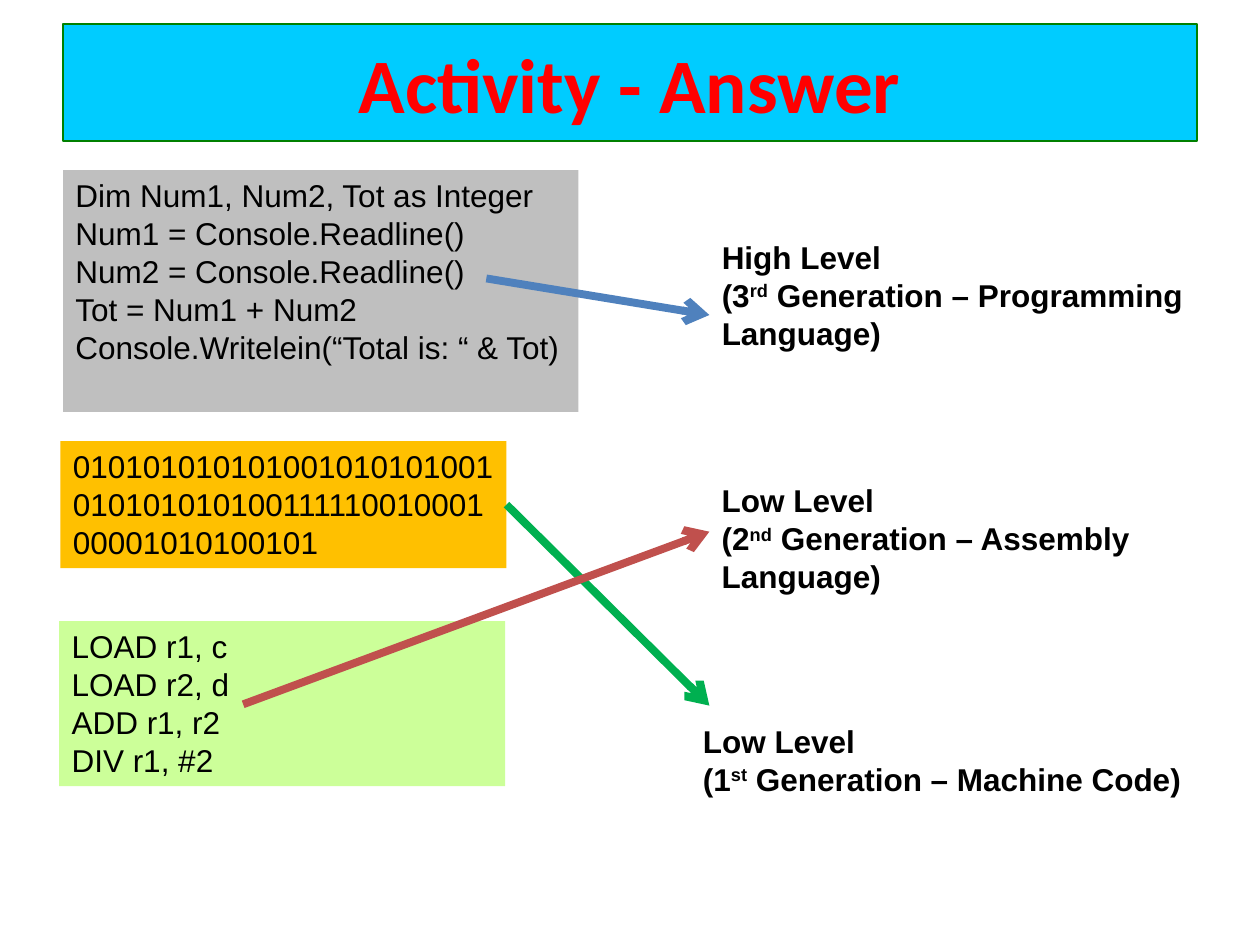
from lxml import etree
from pptx import Presentation
from pptx import util as u
from pptx.dml.color import RGBColor
from pptx.enum import shapes, text
from pptx.oxml.ns import qn

COLORS = {
    "title_fill": "00CCFF", "title_line": "008000", "title_text": "FF0000",
    "text": "000000", "basic": "BFBFBF", "binary": "FFC000",
    "assembly": "CCFF99", "to_machine": "00B050", "to_assembly": "C0504D",
    "to_high": "4F81BD",
}
COLORS = {part: RGBColor.from_string(value) for part, value in COLORS.items()}

prs = Presentation()
prs.slide_width, prs.slide_height = u.Inches(10), u.Inches(7.5)
COLUMN = prs.slide_width / 100   # the grid has 100 columns and 75 rows
ROW = prs.slide_height / 75
slide = prs.slides.add_slide(prs.slide_layouts[5])


def grid(*lengths):
    """Turn alternating columns and rows into slide lengths."""
    return [int(n * (ROW if i % 2 else COLUMN)) for i, n in enumerate(lengths)]


def add_text(place, lines, bold=False):
    """Add a wrapped text box; each line is a list of (text, is_superscript)."""
    box = slide.shapes.add_textbox(*grid(*place))
    frame = box.text_frame
    frame.word_wrap = True
    for i, line in enumerate(lines):
        paragraph = frame.paragraphs[0] if i == 0 else frame.add_paragraph()
        for words, superscript in line:
            run = paragraph.add_run()
            run.text = words
            if superscript:
                run._r.get_or_add_rPr().set("baseline", "30000")
        font = paragraph.font
        font.name, font.size, font.bold = "Arial", u.Pt(18), bold
        font.color.rgb = COLORS["text"]
    return box


# Title
title = slide.shapes.title
title.left, title.top, title.width, title.height = grid(5, 1.9, 90, 9.3)
title.fill.solid()
title.fill.fore_color.rgb = COLORS["title_fill"]
title.line.color.rgb = COLORS["title_line"]
title.line.width = u.Pt(0.75)
title.text_frame.text = "Activity - Answer"
title.text_frame.vertical_anchor = text.MSO_ANCHOR.MIDDLE
heading = title.text_frame.paragraphs[0]
heading.alignment = text.PP_ALIGN.CENTER
heading.font.name, heading.font.size, heading.font.bold = "Calibri", u.Pt(44), True
heading.font.color.rgb = COLORS["title_text"]

# Code samples
samples = {
    "basic": ((5, 13.5, 40.9, 19.2), [
        "Dim Num1, Num2, Tot as Integer",
        "Num1 = Console.Readline()",
        "Num2 = Console.Readline()",
        "Tot = Num1 + Num2",
        "Console.Writelein(“Total is: “ & Tot)",
    ]),
    "binary": ((4.8, 35, 35.4, 10.1), [
        "01010101010100101010100101010101010011111001000100001010100101",
    ]),
    "assembly": ((4.7, 49.3, 35.4, 13.1), [
        "LOAD r1, c", "LOAD r2, d", "ADD r1, r2", "DIV r1, #2",
    ]),
}
code_boxes = {}
for language, (place, code) in samples.items():
    box = add_text(place, [[(line, False)] for line in code])
    box.fill.solid()
    box.fill.fore_color.rgb = COLORS[language]
    code_boxes[language] = box

# Arrows from each sample to its answer
arrows = [
    ("to_machine", (40.2, 40, 56.3, 56)),
    ("to_assembly", (19.3, 55.9, 56.3, 42.2)),
    ("to_high", (38.6, 22.1, 56.3, 25)),
]
for color, ends in arrows:
    arrow = slide.shapes.add_connector(shapes.MSO_CONNECTOR.STRAIGHT, *grid(*ends))
    arrow.line.color.rgb = COLORS[color]
    arrow.line.width = u.Pt(4.5)
    etree.SubElement(arrow.line._get_or_add_ln(), qn("a:tailEnd"), type="arrow")
    etree.SubElement(arrow._element.spPr, qn("a:effectLst"))
    if color == "to_machine":
        arrow.begin_connect(code_boxes["binary"], 3)

# Answers
answers = [
    ((56.3, 18.4, 42.8, 10.1), "High Level", "3", "rd", "Programming Language"),
    ((56.3, 37.7, 41.3, 10.1), "Low Level", "2", "nd", "Assembly Language"),
    ((54.8, 56.8, 42.1, 7.1), "Low Level", "1", "st", "Machine Code"),
]
for place, level, number, ordinal, kind in answers:
    generation = [(f"({number}", False), (ordinal, True),
                  (f" Generation – {kind})", False)]
    add_text(place, [[(level, False)], generation], bold=True)

prs.save("out.pptx")
